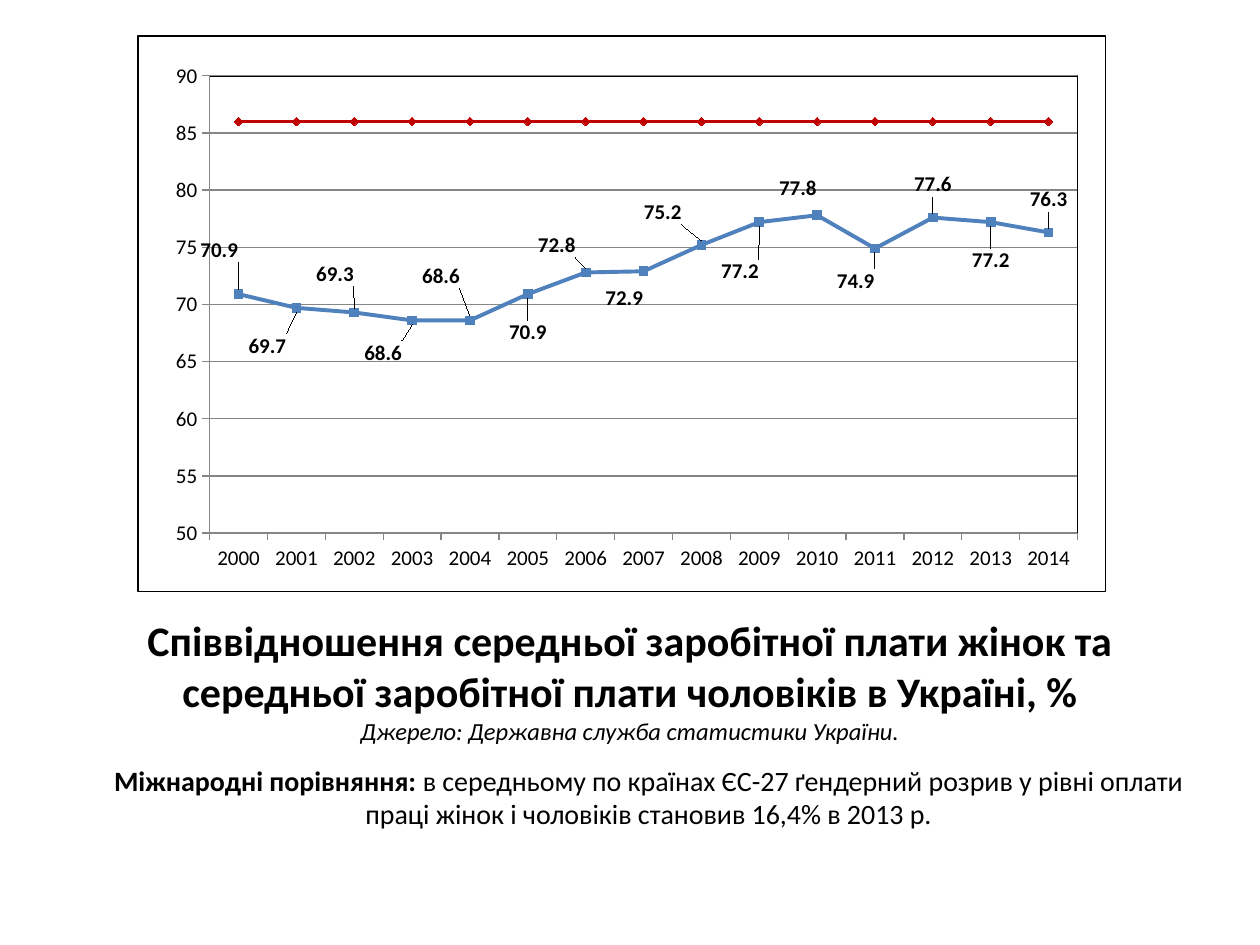
from lxml.etree import SubElement
from pptx import Presentation
from pptx.chart.data import CategoryChartData
from pptx.dml.color import RGBColor
from pptx.enum.chart import XL_CHART_TYPE, XL_LABEL_POSITION as LabelPos
from pptx.enum.chart import XL_MARKER_STYLE as Marker, XL_TICK_MARK as Tick
from pptx.enum.text import MSO_AUTO_SIZE, PP_ALIGN
from pptx.oxml import parse_xml
from pptx.oxml.ns import nsdecls, qn
from pptx.util import Inches, Pt

FONT = "Calibri"


def color(hex_text):
    return RGBColor.from_string(hex_text)


def manual_layout(parent, index, **shares):
    layout = parse_xml(f"<c:layout {nsdecls('c')}><c:manualLayout/></c:layout>")
    for name, value in shares.items():
        SubElement(layout[0], qn(f"c:{name}")).set("val", str(value))
    parent.insert(index, layout)


deck = Presentation()
deck.slide_width, deck.slide_height = Inches(10), Inches(7.5)
page = deck.slides.add_slide(deck.slide_layouts[6])

# Wage ratio by year, with the label offset (dx, dy) as a share of the chart
ratios = [
    (70.9, -0.02, -0.04), (69.7, -0.03, 0.03), (69.3, -0.02, -0.03),
    (68.6, -0.03, 0.02), (68.6, -0.03, -0.04), (70.9, 0, 0.03),
    (72.8, -0.03, -0.01), (72.9, -0.02, 0.01), (75.2, -0.04, -0.02),
    (77.2, -0.02, 0.05), (77.8, -0.02, -0.01), (74.9, -0.02, 0.02),
    (77.6, 0, -0.02), (77.2, 0, 0.03), (76.3, 0, -0.02),
]
data = CategoryChartData()
data.categories = [str(2000 + i) for i in range(len(ratios))]
data.add_series("Series 1", [value for value, dx, dy in ratios])
data.add_series("Series 2", [86] * len(ratios))
chart = page.shapes.add_chart(
    XL_CHART_TYPE.LINE_MARKERS,
    Inches(1.09), Inches(0.28), Inches(7.69), Inches(4.42), data).chart
chart.has_legend = chart.has_title = False
chart.font.name, chart.font.size = FONT, Pt(12)
chart.font.color.rgb = color("000000")

# Axes and gridlines
years, percents = chart.category_axis, chart.value_axis
percents.minimum_scale, percents.maximum_scale, percents.major_unit = 50, 90, 5
percents.has_major_gridlines = True
for axis in (years, percents):
    axis.major_tick_mark, axis.minor_tick_mark = Tick.OUTSIDE, Tick.NONE
for part in (years, percents, percents.major_gridlines):
    part.format.line.color.rgb = color("868686")
    part.format.line.width = Pt(0.75)

# Lines and markers
styles = [("4F81BD", Marker.SQUARE), ("C00000", Marker.DIAMOND)]
for series, (tone, marker) in zip(chart.plots[0].series, styles):
    series.smooth = False
    series.format.line.color.rgb = color(tone)
    series.format.line.width = Pt(2.25)
    series.marker.style, series.marker.size = marker, 5
    series.marker.format.fill.solid()
    series.marker.format.fill.fore_color.rgb = color(tone)
    series.marker.format.line.color.rgb = color(tone)

# Value labels above or below their points
ratio_series = chart.plots[0].series[0]
for i, (value, dx, dy) in enumerate(ratios):
    label = ratio_series.points[i].data_label
    label.position = LabelPos.ABOVE if dy < 0 else LabelPos.BELOW
    label.font.name, label.font.size, label.font.bold = FONT, Pt(12), True
    label.font.color.rgb = color("000000")
for dlbl, (value, dx, dy) in zip(ratio_series._element.xpath(".//c:dLbl"), ratios):
    manual_layout(dlbl, 1, x=dx, y=dy)

# Plot area place, and black frames around plot and chart
plot_area = chart._chartSpace.chart.plotArea
for old in plot_area.findall(qn("c:layout")):
    plot_area.remove(old)
manual_layout(plot_area, 0, layoutTarget="inner", xMode="edge", yMode="edge",
              x=0.074, y=0.072, w=0.897, h=0.823)
frame = (f"<c:spPr {nsdecls('c', 'a')}><a:noFill/><a:ln w='9525'><a:solidFill>"
         "<a:srgbClr val='000000'/></a:solidFill></a:ln></c:spPr>")
plot_area.append(parse_xml(frame))
chart._chartSpace.chart.addnext(parse_xml(frame))

# Heading with source, then the comparison: runs are (text, bold, italic)
texts = [
    ((0.68, 4.83, 8.64, 1.14), [
        (24, [("Співвідношення середньої заробітної плати жінок та середньої "
               "заробітної плати чоловіків в Україні, %", True, False)]),
        (14, [("Джерело: Державна служба статистики України.", False, True)])]),
    ((0.63, 6.01, 9.04, 0.64), [
        (16, [("Міжнародні порівняння: ", True, False),
              ("в середньому по країнах ЄС-27 ґендерний розрив у рівні оплати "
               "праці жінок і чоловіків становив 16,4% в 2013 р.", False, False)])]),
]
for place, paragraphs in texts:
    frame = page.shapes.add_textbox(*map(Inches, place)).text_frame
    frame.word_wrap, frame.auto_size = True, MSO_AUTO_SIZE.SHAPE_TO_FIT_TEXT
    for i, (size, runs) in enumerate(paragraphs):
        para = frame.add_paragraph() if i else frame.paragraphs[0]
        para.alignment = PP_ALIGN.CENTER
        para.font.name, para.font.size = FONT, Pt(size)
        para.font.color.rgb = color("000000")
        for text, bold, italic in runs:
            span = para.add_run()
            span.text = text
            span.font.bold, span.font.italic = bold, italic

deck.save("out.pptx")
